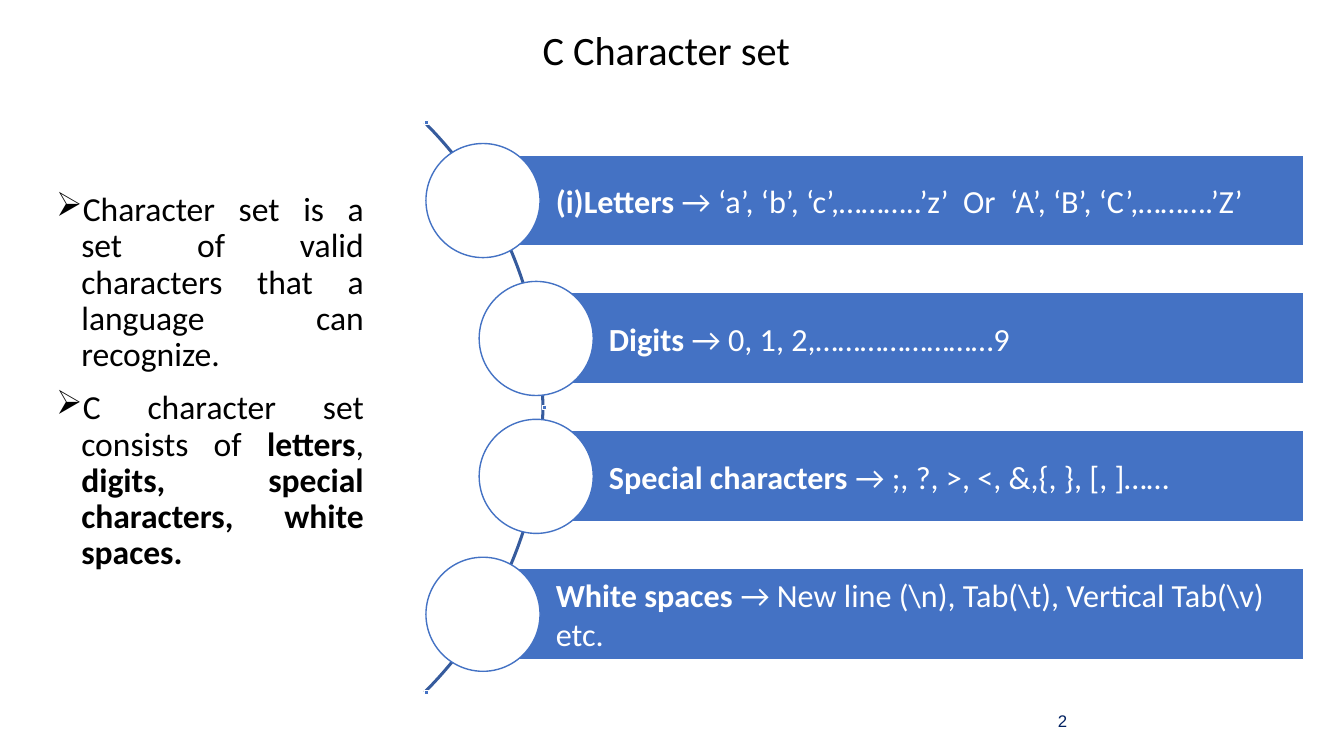
from math import sqrt
from lxml.etree import SubElement
from pptx import Presentation
from pptx.dml.color import RGBColor
from pptx.enum.shapes import MSO_SHAPE
from pptx.enum.text import MSO_ANCHOR, PP_ALIGN
from pptx.oxml.ns import qn
from pptx.util import Pt

BLUE, DARK_BLUE, NAVY = "4472C4", "365B9D", "002060"
WHITE, BLACK = "FFFFFF", "000000"

DEFINITION = [
    [("Character set is a set of valid characters that a language can recognize.", False)],
    [("C character set consists of ", False), ("letters", True), (", ", False),
     ("digits, special characters, white spaces.", True)],
]
CATEGORIES = [
    ("Letters ", "→ ‘a’, ‘b’, ‘c’,………..’z’  Or  ‘A’, ‘B’, ‘C’,……….’Z’"),
    ("Digits ", "→ 0, 1, 2,……………………9"),
    ("Special characters ", "→ ;, ?, >, <, &,{, }, [, ]……"),
    ("White spaces ", "→ New line (\\n), Tab(\\t), Vertical Tab(\\v) etc."),
]


def color(value):
    return RGBColor.from_string(value)


def add_runs(paragraph, runs, size, font_color, font_name="Calibri"):
    for text, bold in runs:
        run = paragraph.add_run()
        run.text = text
        run.font.name = font_name
        run.font.size = Pt(size)
        run.font.bold = bold
        run.font.color.rgb = color(font_color)


def add_text_frame(slide, left, top, width, height, anchor):
    box = slide.shapes.add_textbox(Pt(left), Pt(top), Pt(width), Pt(height))
    box.text_frame.word_wrap = True
    box.text_frame.vertical_anchor = anchor
    return box.text_frame


def add_shape(slide, kind, left, top, width, height, fill, line):
    shape = slide.shapes.add_shape(kind, Pt(left), Pt(top), Pt(width), Pt(height))
    shape.shadow.inherit = False
    if fill:
        shape.fill.solid()
        shape.fill.fore_color.rgb = color(fill)
    else:
        shape.fill.background()
    shape.line.color.rgb = color(line)
    shape.line.width = Pt(1)
    return shape


def add_centered_line(slide, left, top, width, height, text, size, font_color, font_name):
    frame = add_text_frame(slide, left, top, width, height, MSO_ANCHOR.MIDDLE)
    paragraph = frame.paragraphs[0]
    paragraph.alignment = PP_ALIGN.CENTER
    add_runs(paragraph, [(text, False)], size, font_color, font_name)


def add_definition(slide, left, top, width, height):
    frame = add_text_frame(slide, left, top, width, height, MSO_ANCHOR.TOP)
    for index, runs in enumerate(DEFINITION):
        paragraph = frame.add_paragraph() if index else frame.paragraphs[0]
        # Hanging arrow bullet
        properties = paragraph._p.get_or_add_pPr()
        properties.set("marL", str(Pt(18)))
        properties.set("indent", str(-Pt(18)))
        SubElement(properties, qn("a:buChar")).set("char", "➢")
        paragraph.alignment = PP_ALIGN.JUSTIFY
        paragraph.line_spacing = 0.9
        paragraph.space_before = Pt(12 if index else 0)
        add_runs(paragraph, runs, 24, BLACK)


def add_category(slide, left, top, width, height, category, numbered):
    """Place a labelled bar with a circle centred on its left edge."""
    bar = add_shape(slide, MSO_SHAPE.RECTANGLE, left, top, width, height, BLUE, WHITE)
    frame = bar.text_frame
    frame.word_wrap = True
    frame.vertical_anchor = MSO_ANCHOR.MIDDLE
    frame.margin_left = Pt(52)
    frame.margin_top = frame.margin_right = frame.margin_bottom = Pt(4.5)
    paragraph = frame.paragraphs[0]
    if numbered:
        properties = paragraph._p.get_or_add_pPr()
        SubElement(properties, qn("a:buAutoNum")).set("type", "romanLcParenBoth")
    paragraph.alignment = PP_ALIGN.LEFT
    name, members = category
    add_runs(paragraph, [(name, True), (members, False)], 23, WHITE)

    diameter = height * 1.25
    add_shape(slide, MSO_SHAPE.OVAL, left - diameter / 2, top + (height - diameter) / 2,
              diameter, diameter, WHITE, BLUE)


def add_category_list(slide, left, top, width, height):
    radius = 288
    middle = top + height / 2
    half_chord = radius / sqrt(2)
    center = left - half_chord

    # Arc joining the circles
    arc = add_shape(slide, MSO_SHAPE.BLOCK_ARC, center - radius, middle - radius,
                    2 * radius, 2 * radius, None, DARK_BLUE)
    for index, value in enumerate((189, 27, 0.002)):
        arc.adjustments[index] = value

    # Bars, the middle two pushed right by the arc
    pitch, bar_height = 98.5, 65.2
    for index, category in enumerate(CATEGORIES):
        indent = 79 if index in (1, 2) else 41
        bar_top = middle + (index - 1.5) * pitch - bar_height / 2
        add_category(slide, left + indent, bar_top, width - indent, bar_height,
                     category, index == 0)

    # Small squares at the ends and middle of the arc
    side = 2.9
    for x, y in ((left, middle - half_chord), (center + radius, middle),
                 (left, middle + half_chord)):
        add_shape(slide, MSO_SHAPE.RECTANGLE, x - side / 4, y - side / 2,
                  side, side, BLUE, WHITE)


def main():
    presentation = Presentation()
    presentation.slide_width, presentation.slide_height = Pt(960), Pt(540)
    slide = presentation.slides.add_slide(presentation.slide_layouts[6])
    add_centered_line(slide, 33, 15, 886, 40, "C Character set", 28.8, BLACK, "Calibri")
    add_definition(slide, 33, 134, 234, 289)
    add_category_list(slide, 304, 87, 627, 408)
    add_centered_line(slide, 628.5, 504, 261, 21.6, "2", 12, NAVY, "Arial")
    presentation.save("out.pptx")


if __name__ == "__main__":
    main()
